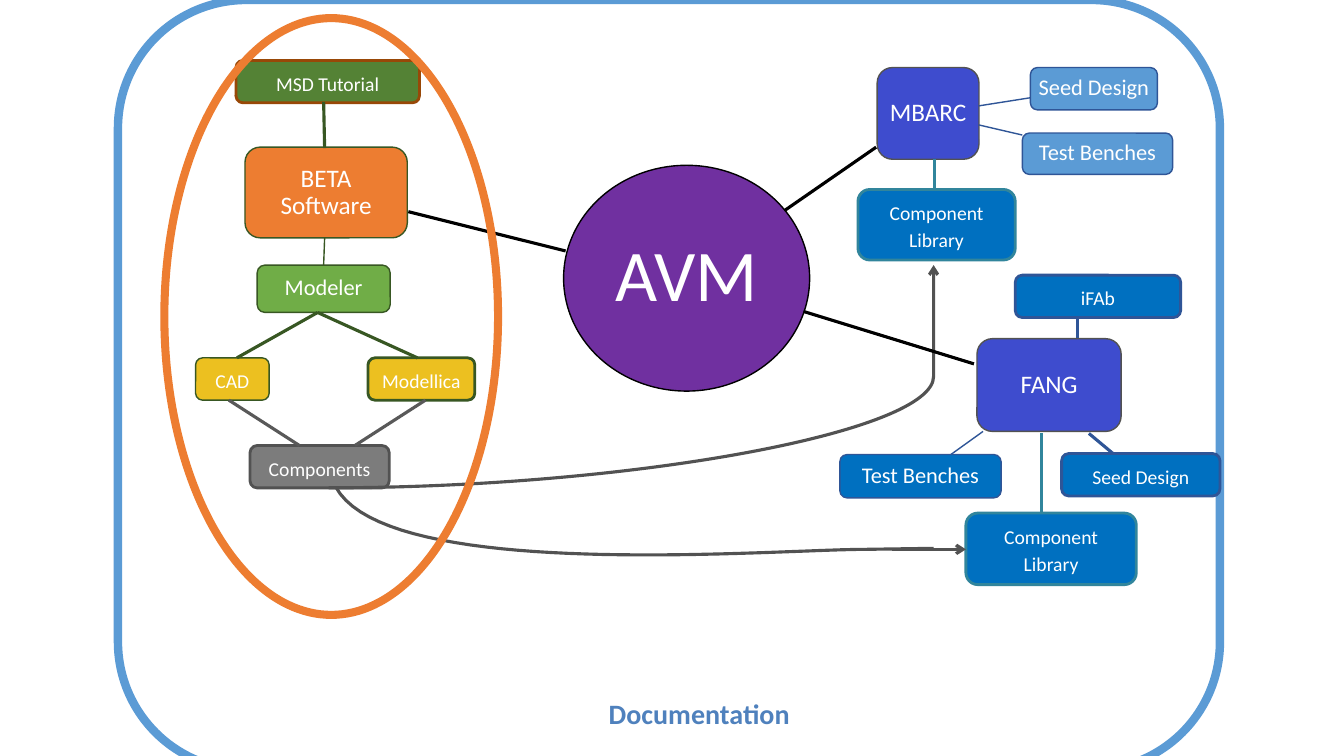
from lxml import etree
from pptx import Presentation, util as u
from pptx.dml.color import RGBColor
from pptx.enum import shapes, text
from pptx.oxml.ns import qn

FONT = "Calibri"
WHITE, BLACK, GRAY, PURPLE = "FFFFFF", "000000", "525252", "7030A0"
INDIGO, BLUE, SKY, NAVY, TEAL = "3E4CCE", "0070C0", "5B9BD5", "2F5597", "31859C"
ORANGE, GREEN, YELLOW, DARK_GREEN = "ED7D31", "70AD47", "ECC020", "385723"
ROUND = shapes.MSO_SHAPE.ROUNDED_RECTANGLE
OVAL = shapes.MSO_SHAPE.OVAL

# Large hubs and leaves: text, left, top, width, height, fill, line, font size
HUBS = [
    ("MBARC", 8.7, 0.67, 1.01, 0.91, INDIGO, GRAY, 18),
    ("Seed Design", 10.22, 0.67, 1.26, 0.42, SKY, NAVY, 16),
    ("Test Benches", 10.14, 1.32, 1.49, 0.41, SKY, NAVY, 16),
    ("FANG", 9.69, 3.36, 1.43, 0.92, INDIGO, GRAY, 18),
    ("Test Benches", 8.33, 4.51, 1.6, 0.43, BLUE, NAVY, 16),
    ("BETA Software", 2.43, 1.46, 1.61, 0.9, ORANGE, DARK_GREEN, 18),
    ("Modeler", 2.55, 2.63, 1.32, 0.47, GREEN, DARK_GREEN, 16),
]

# Small 14 pt boxes: text, left, top, width, height, fill, line, line width
PARTS = [
    ("CAD", 1.94, 3.55, 0.73, 0.42, YELLOW, DARK_GREEN, 1),
    ("Modellica", 3.65, 3.55, 1.06, 0.42, YELLOW, DARK_GREEN, 2),
    ("Components", 2.48, 4.42, 1.38, 0.42, "7C7C7C", GRAY, 2),
    ("MSD Tutorial", 2.34, 0.6, 1.82, 0.42, "548235", "984807", 2),
    ("Seed Design", 10.53, 4.5, 1.57, 0.42, BLUE, NAVY, 2),
    ("iFAb", 10.07, 2.73, 1.64, 0.42, BLUE, NAVY, 2),
    ("Component Library", 8.51, 1.88, 1.56, 0.7, BLUE, TEAL, 2),
    ("Component Library", 9.58, 5.09, 1.69, 0.71, BLUE, TEAL, 2),
]

# Straight links: x1, y1, x2, y2, colour, width
LINKS = [
    (9.71, 1.05, 10.22, 0.97, NAVY, 1),
    (9.71, 1.24, 10.14, 1.34, NAVY, 1),
    (9.75, 4.28, 9.43, 4.51, NAVY, 1),
    (3.22, 2.36, 3.21, 2.63, DARK_GREEN, 1),
    (10.8, 4.3, 11.04, 4.5, NAVY, 2.25),
    (10.69, 3.14, 10.69, 3.35, NAVY, 2.25),
    (3.15, 3.1, 2.35, 3.55, DARK_GREEN, 2.25),
    (4.14, 3.55, 3.15, 3.1, DARK_GREEN, 2.25),
    (3.22, 1.47, 3.21, 1.01, DARK_GREEN, 2.25),
    (2.27, 3.97, 2.97, 4.42, "595959", 2.25),
    (4.22, 3.97, 3.52, 4.42, "595959", 2.25),
    (9.27, 1.58, 9.27, 1.87, TEAL, 2.25),
    (10.33, 4.3, 10.33, 5.09, TEAL, 2.25),
    (8.69, 1.46, 7.78, 2.09, BLACK, 2.25),
    (5.61, 2.49, 4.05, 2.1, BLACK, 2.25),
    (9.66, 3.61, 7.97, 3.09, BLACK, 2.25),
]


def rgb(value):
    return RGBColor.from_string(value)


def set_line(sp, color, width):
    sp.line.color.rgb = rgb(color)
    sp.line.width = u.Pt(width)


def add_outline(s, kind, left, top, width, height, line, line_width, fill=None):
    sp = s.shapes.add_shape(kind, *map(u.Inches, (left, top, width, height)))
    sp.shadow.inherit = False
    if fill:
        sp.fill.solid()
        sp.fill.fore_color.rgb = rgb(fill)
    else:
        sp.fill.background()
    set_line(sp, line, line_width)
    return sp


def write(sp, words, size, color=WHITE, spacing=0.9, after=0, margins=(0.04, 0.04),
          anchor=text.MSO_ANCHOR.MIDDLE, bold=False):
    tf = sp.text_frame
    tf.word_wrap = True
    tf.vertical_anchor = anchor
    tf.margin_left = tf.margin_right = u.Inches(margins[0])
    tf.margin_top = tf.margin_bottom = u.Inches(margins[1])
    p = tf.paragraphs[0]
    p.text = words
    p.alignment = text.PP_ALIGN.CENTER
    p.line_spacing = spacing
    p.space_after = u.Pt(after)
    p.font.name, p.font.size, p.font.bold = FONT, u.Pt(size), bold
    p.font.color.rgb = rgb(color)


def add_link(s, x1, y1, x2, y2, color, width, kind=shapes.MSO_CONNECTOR.STRAIGHT,
             arrow=False):
    line = s.shapes.add_connector(kind, *map(u.Inches, (x1, y1, x2, y2)))
    set_line(line, color, width)
    props = line._element.spPr
    if arrow:
        etree.SubElement(props.get_or_add_ln(), qn("a:tailEnd"), type="arrow")
    etree.SubElement(props, qn("a:effectLst"))
    return line


def add_library_curve(s):
    """Curve that leaves Components sideways and climbs to the upper library."""
    line = add_link(s, 3.26, 4.84, 9.26, 2.63, GRAY, 2.25,
                    shapes.MSO_CONNECTOR.CURVE, arrow=True)
    geom = line._element.spPr.find(qn("a:prstGeom"))
    guides = geom.find(qn("a:avLst"))
    if guides is None:
        guides = etree.SubElement(geom, qn("a:avLst"))
    etree.SubElement(guides, qn("a:gd"), name="adj1", fmla="val 100000")


def bezier(controls, steps=40):
    for i in range(steps + 1):
        t = i / steps
        weights = ((1 - t) ** 3, 3 * t * (1 - t) ** 2, 3 * t * t * (1 - t), t ** 3)
        yield tuple(sum(w * c[axis] for w, c in zip(weights, controls)) for axis in (0, 1))


def add_lower_curve(s):
    """Curve from Components to the lower library, with its arrow."""
    curve = list(bezier([(3.33, 4.83), (3.84, 5.78), (7.65, 5.45), (8.6, 5.45)]))
    points = [(u.Inches(x), u.Inches(y)) for x, y in curve + [(9.26, 5.44)]]
    builder = s.shapes.build_freeform(*points[0])
    builder.add_line_segments(points[1:], close=False)
    sp = builder.convert_to_shape()
    sp.shadow.inherit = False
    sp.fill.background()
    set_line(sp, GRAY, 2.25)
    add_link(s, 8.85, 5.45, 9.58, 5.45, GRAY, 2.25, arrow=True)


def main():
    prs = Presentation()
    prs.slide_width, prs.slide_height = u.Inches(13.33), u.Inches(7.5)
    s = prs.slides.add_slide(prs.slide_layouts[6])

    # Documentation frame
    add_outline(s, ROUND, 1.17, 0, 10.93, 7.64, SKY, 6)
    caption = s.shapes.add_textbox(*map(u.Inches, (5.9, 6.73, 2.07, 0.7)))
    write(caption, "Documentation", 20, "4F81BD", 1.25, 10, (0, 0.1),
          text.MSO_ANCHOR.TOP, True)

    # Centre
    avm = add_outline(s, OVAL, 5.59, 1.64, 2.44, 2.24, BLACK, 1, PURPLE)
    write(avm, "AVM", 52, margins=(0.14, 0.14))

    # Boxes
    for words, left, top, width, height, fill, line, size in HUBS:
        sp = add_outline(s, ROUND, left, top, width, height, line, 1, fill)
        write(sp, words, size)
    for words, left, top, width, height, fill, line, line_width in PARTS:
        sp = add_outline(s, ROUND, left, top, width, height, line, line_width, fill)
        write(sp, words, 14, spacing=1.15, after=10, margins=(0.1, 0.05))

    # Links
    add_library_curve(s)
    add_lower_curve(s)
    for link in LINKS:
        add_link(s, *link)

    # Ring around the software tools
    add_outline(s, OVAL, 1.63, 0.18, 3.31, 5.92, ORANGE, 5.75)

    prs.save("out.pptx")


if __name__ == "__main__":
    main()
